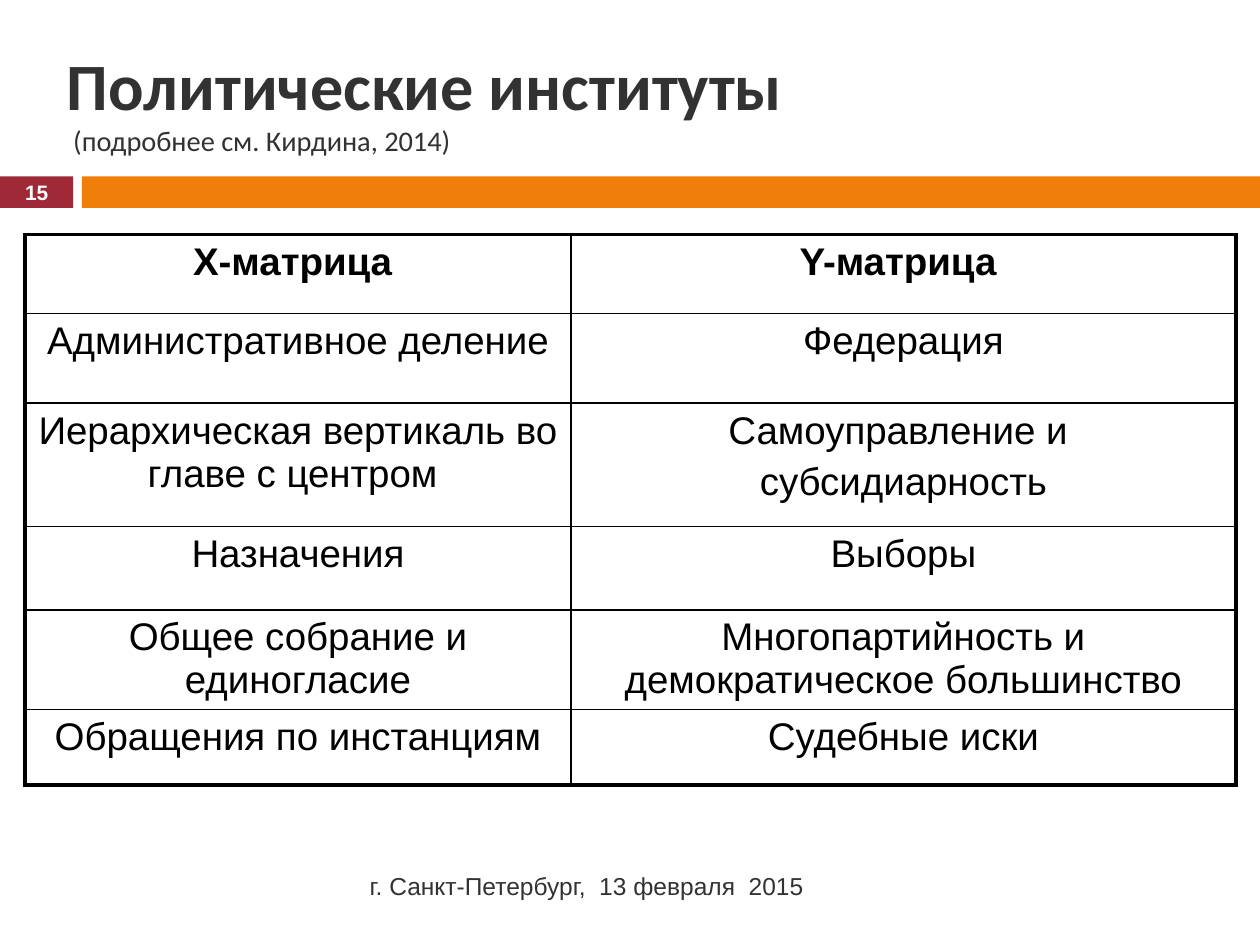
from dataclasses import dataclass
from lxml.etree import SubElement
from pptx import Presentation
from pptx.dml.color import RGBColor as RGB
from pptx.enum.shapes import MSO_SHAPE
from pptx.enum.text import MSO_ANCHOR, MSO_AUTO_SIZE, PP_ALIGN
from pptx.oxml.ns import qn
from pptx.util import Inches, Pt


@dataclass(frozen=True)
class Theme:
    red: str = "9F2936"
    orange: str = "F07F09"
    dark: str = "323232"
    black: str = "000000"
    white: str = "FFFFFF"
    title: float = 37.8
    subtitle: float = 16.2
    cell: float = 22
    footer: float = 14
    number: float = 11.9
    outer: float = 2.25
    inner: float = 1


T = Theme()


def style(p, size, color, bold=False, font="Arial", align=None):
    p.alignment = align
    for r in p.runs:
        r.font.name = font
        r.font.size = Pt(size)
        r.font.bold = bold
        r.font.color.rgb = RGB.from_string(color)


def add_border(cell, side, width):
    ln = SubElement(cell._tc.get_or_add_tcPr(), qn(f"a:{side}"), w=str(Pt(width)))
    fill = SubElement(ln, qn("a:solidFill"))
    SubElement(fill, qn("a:srgbClr"), val=T.black)


prs = Presentation()
prs.slide_width, prs.slide_height = Inches(10), Inches(7.5)
s = prs.slides.add_slide(prs.slide_layouts[5])

for left, width, color in [(0, 0.58, T.red), (0.65, 9.35, T.orange)]:
    sp = s.shapes.add_shape(MSO_SHAPE.RECTANGLE, Inches(left), Inches(1.4), Inches(width), Inches(0.25))
    sp.shadow.inherit = False
    sp.fill.solid()
    sp.fill.fore_color.rgb = RGB.from_string(color)
    sp.line.fill.background()

title = s.shapes.title
title.left, title.top = Inches(0.43), Inches(0.29)
title.width, title.height = Inches(9.17), Inches(1.02)
tf = title.text_frame
tf.text = "Политические институты\n (подробнее см. Кирдина, 2014)"
tf.auto_size = MSO_AUTO_SIZE.NONE
tf.vertical_anchor = MSO_ANCHOR.MIDDLE
style(tf.paragraphs[0], T.title, T.dark, True, "Calibri", PP_ALIGN.LEFT)
style(tf.paragraphs[1], T.subtitle, T.dark, False, "Calibri", PP_ALIGN.LEFT)

rows = [
    ("Х-матрица ", "Y-матрица "),
    ("Административное деление", "Федерация"),
    ("Иерархическая вертикаль во главе с центром ", "Самоуправление и \nсубсидиарность"),
    ("Назначения", "Выборы"),
    ("Общее собрание и единогласие", "Многопартийность и демократическое большинство"),
    ("Обращения по инстанциям", "Судебные иски"),
]
heights = [0.63, 0.71, 0.98, 0.66, 0.79, 0.6]
widths = [4.33, 5.28]
table = s.shapes.add_table(
    len(rows), len(widths), Inches(0.2), Inches(1.86), Inches(sum(widths)), Inches(sum(heights))
).table
table.horz_banding = False
for col, width in zip(table.columns, widths):
    col.width = Inches(width)
for i, (texts, height) in enumerate(zip(rows, heights)):
    table.rows[i].height = Inches(height)
    for j, text in enumerate(texts):
        cell = table.cell(i, j)
        cell.text_frame.text = text
        for p in cell.text_frame.paragraphs:
            p.space_before = Pt(0.2 * T.cell)
            style(p, T.cell, T.black, i == 0, align=PP_ALIGN.CENTER)
        edges = {"lnL": j == 0, "lnR": j == len(widths) - 1, "lnT": i == 0, "lnB": i == len(rows) - 1}
        for side, is_outer in edges.items():
            add_border(cell, side, T.outer if is_outer else T.inner)
        cell.fill.background()

labels = [
    ("г. Санкт-Петербург,  13 февраля  2015", (0.67, 6.83, 5.93, 0.4), 0.22, T.footer, T.dark, False, PP_ALIGN.RIGHT),
    ("15", (0, 1.39, 0.58, 0.27), 0.1, T.number, T.white, True, PP_ALIGN.CENTER),
]
for text, box, margin, size, color, bold, align in labels:
    tf = s.shapes.add_textbox(*map(Inches, box)).text_frame
    tf.text = text
    tf.word_wrap = True
    tf.vertical_anchor = MSO_ANCHOR.MIDDLE
    tf.margin_right = Inches(margin)
    style(tf.paragraphs[0], size, color, bold, align=align)

prs.save("out.pptx")
